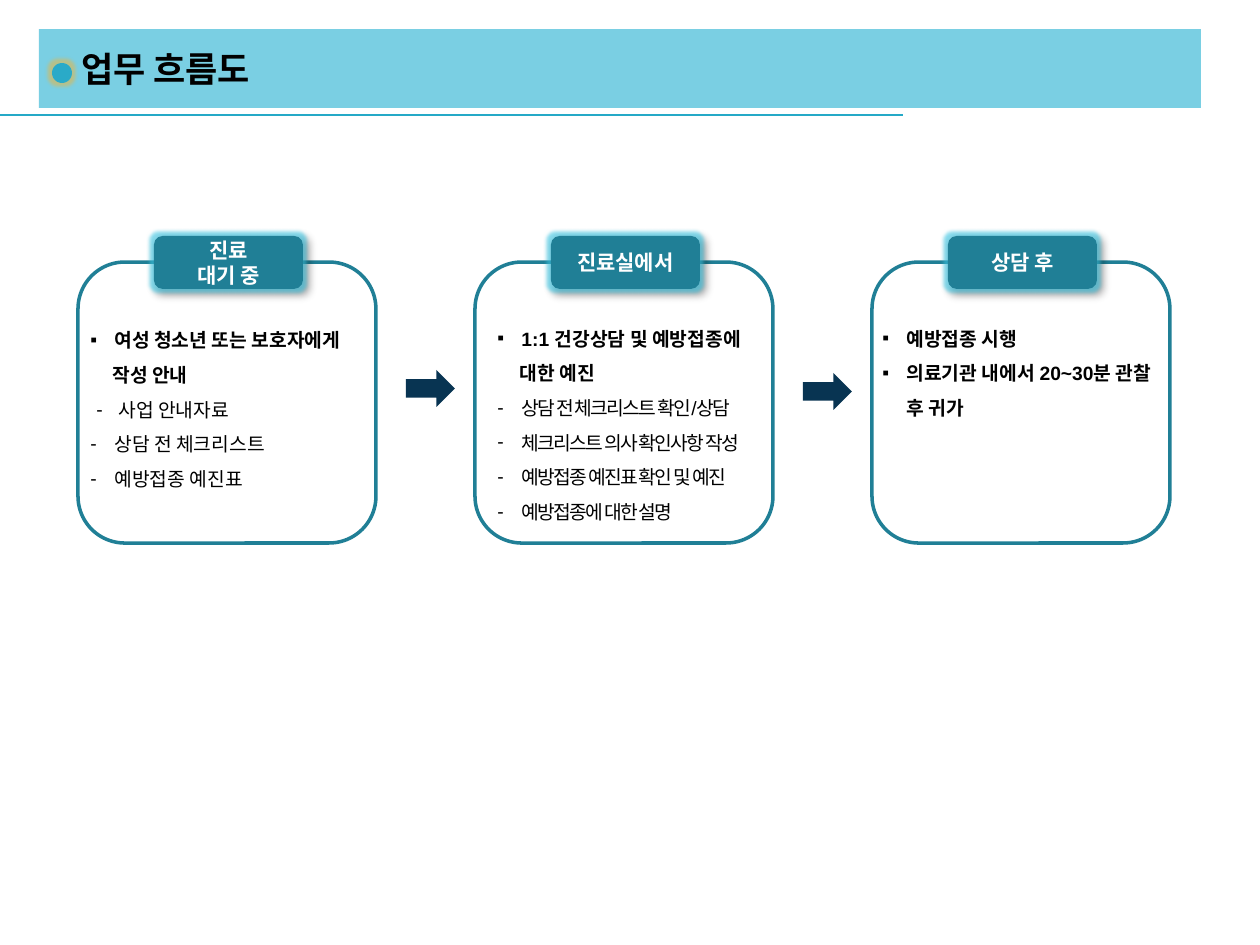
from lxml.etree import SubElement
from pptx import Presentation
from pptx.dml.color import RGBColor
from pptx.enum.shapes import MSO_CONNECTOR as Connector, MSO_SHAPE as Shape
from pptx.enum.text import MSO_ANCHOR as Anchor, MSO_AUTO_SIZE as AutoSize, PP_ALIGN as Align
from pptx.oxml.ns import qn
from pptx.util import Emu, Pt

PX = 914400 / 126
BLACK = RGBColor(0x00, 0x00, 0x00)
WHITE = RGBColor(0xFF, 0xFF, 0xFF)
TEAL = RGBColor(0x20, 0x7F, 0x96)
NAVY = RGBColor(0x08, 0x34, 0x52)
BAND = RGBColor(0x7A, 0xCF, 0xE3)
RULE = RGBColor(0x25, 0xA9, 0xC7)
DOT = RGBColor(0x2A, 0xAA, 0xC8)
TAB_GLOW = RGBColor(0x3C, 0xC8, 0xE6)
DOT_GLOW = RGBColor(0xE0, 0xB8, 0x50)

CARD_LEFT, CARD_STEP = 78, 397
HEAD, MORE, ITEM, INSET_ITEM = "head", "more", "item", "inset item"
LAYOUT = {
    HEAD: ("▪", 24, -24),
    MORE: (None, 22, 0),
    ITEM: ("-", 24, -24),
    INSET_ITEM: ("-", 28, -22),
}
STEPS = [
    ("진료\n대기 중", (78, 311, 304, 188), 0, [
        (HEAD, "여성 청소년 또는 보호자에게"),
        (MORE, "작성 안내"),
        (INSET_ITEM, "사업 안내자료"),
        (ITEM, "상담 전 체크리스트"),
        (ITEM, "예방접종 예진표"),
    ]),
    ("진료실에서", (485, 309, 296, 223), -100, [
        (HEAD, "1:1 건강상담 및 예방접종에"),
        (MORE, "대한 예진"),
        (ITEM, "상담 전 체크리스트 확인/상담"),
        (ITEM, "체크리스트 의사 확인사항 작성"),
        (ITEM, "예방접종 예진표 확인 및 예진"),
        (ITEM, "예방접종에 대한 설명"),
    ]),
    ("상담 후", (870, 309, 303, 117), 0, [
        (HEAD, "예방접종 시행"),
        (HEAD, "의료기관 내에서 20~30분 관찰 후 귀가"),
    ]),
]


def px(value):
    return Emu(round(value * PX))


def set_font(para, name, size, color, bold):
    font = para.font
    font.name, font.size, font.bold = name, Pt(size), bold
    font.color.rgb = color


def add_shape(page, kind, area, fill=None, line=None):
    shape = page.shapes.add_shape(kind, *map(px, area))
    shape.shadow.inherit = False
    if fill is None:
        shape.fill.background()
    else:
        shape.fill.solid()
        shape.fill.fore_color.rgb = fill
    if line is None:
        shape.line.fill.background()
    else:
        shape.line.color.rgb = line
        shape.line.width = Pt(2)
    return shape


def add_effect(shape, tag, color, alpha, **settings):
    effects = shape._element.spPr.find(qn("a:effectLst"))
    effect = SubElement(effects, qn(tag), {key: str(value) for key, value in settings.items()})
    tint = SubElement(effect, qn("a:srgbClr"), val=str(color))
    SubElement(tint, qn("a:alpha"), val=str(alpha * 1000))


def add_title(page, text):
    title = page.shapes.title
    title.left, title.top, title.width, title.height = map(px, (39, 29, 1162, 79))
    title.fill.solid()
    title.fill.fore_color.rgb = BAND
    frame = title.text_frame
    frame.auto_size = AutoSize.NONE
    frame.vertical_anchor = Anchor.MIDDLE
    frame.margin_left = px(42)
    frame.text = text
    para = frame.paragraphs[0]
    para.alignment = Align.LEFT
    set_font(para, "Arial", 20, BLACK, True)
    dot = add_shape(page, Shape.OVAL, (52, 63, 20, 20), DOT)
    add_effect(dot, "a:glow", DOT_GLOW, 60, rad=Pt(4))


def add_rule(page):
    rule = page.shapes.add_connector(Connector.STRAIGHT, 0, px(115), px(903), px(115))
    rule.line.color.rgb = RULE
    rule.line.width = Pt(0.75)
    SubElement(rule._element.spPr, qn("a:effectLst"))


def add_tab(page, left, text):
    tab = add_shape(page, Shape.ROUNDED_RECTANGLE, (left, 236, 149, 53), TEAL)
    add_effect(tab, "a:glow", TAB_GLOW, 60, rad=Pt(4))
    add_effect(tab, "a:outerShdw", BLACK, 40, blurRad=Pt(4), dist=Pt(3), dir=45 * 60000)
    frame = tab.text_frame
    frame.vertical_anchor = Anchor.MIDDLE
    frame.text = text
    for para in frame.paragraphs:
        para.alignment = Align.CENTER
        set_font(para, "Noto Sans CJK KR", 12, WHITE, True)


def add_notes(page, area, spacing, entries):
    box = page.shapes.add_textbox(*map(px, area))
    frame = box.text_frame
    frame.word_wrap = True
    frame.text = "\n".join(text for _, text in entries)
    for para, (role, _) in zip(frame.paragraphs, entries):
        bullet, margin, indent = LAYOUT[role]
        para.line_spacing = 1.5
        props = para._p.get_or_add_pPr()
        props.set("marL", str(px(margin)))
        props.set("indent", str(px(indent)))
        if bullet:
            SubElement(props, qn("a:buFont"), typeface="Arial")
            SubElement(props, qn("a:buChar"), char=bullet)
        bold = role in (HEAD, MORE)
        set_font(para, "Arial", 11, BLACK, bold)
        if spacing and not bold:
            for span in para.runs:
                span._r.get_or_add_rPr().set("spc", str(spacing))


def main():
    deck = Presentation()
    deck.slide_width, deck.slide_height = px(1260), px(945)
    page = deck.slides.add_slide(deck.slide_layouts[5])
    add_rule(page)
    add_title(page, "업무 흐름도")
    for index, (label, area, spacing, entries) in enumerate(STEPS):
        left = CARD_LEFT + index * CARD_STEP
        add_shape(page, Shape.ROUNDED_RECTANGLE, (left, 262, 298, 281), line=TEAL)
        add_tab(page, left + 76, label)
        add_notes(page, area, spacing, entries)
    for index, top in enumerate((370, 373)):
        left = CARD_LEFT + 328 + index * CARD_STEP
        add_shape(page, Shape.RIGHT_ARROW, (left, top, 49, 37), NAVY)
    deck.save("out.pptx")


if __name__ == "__main__":
    main()
